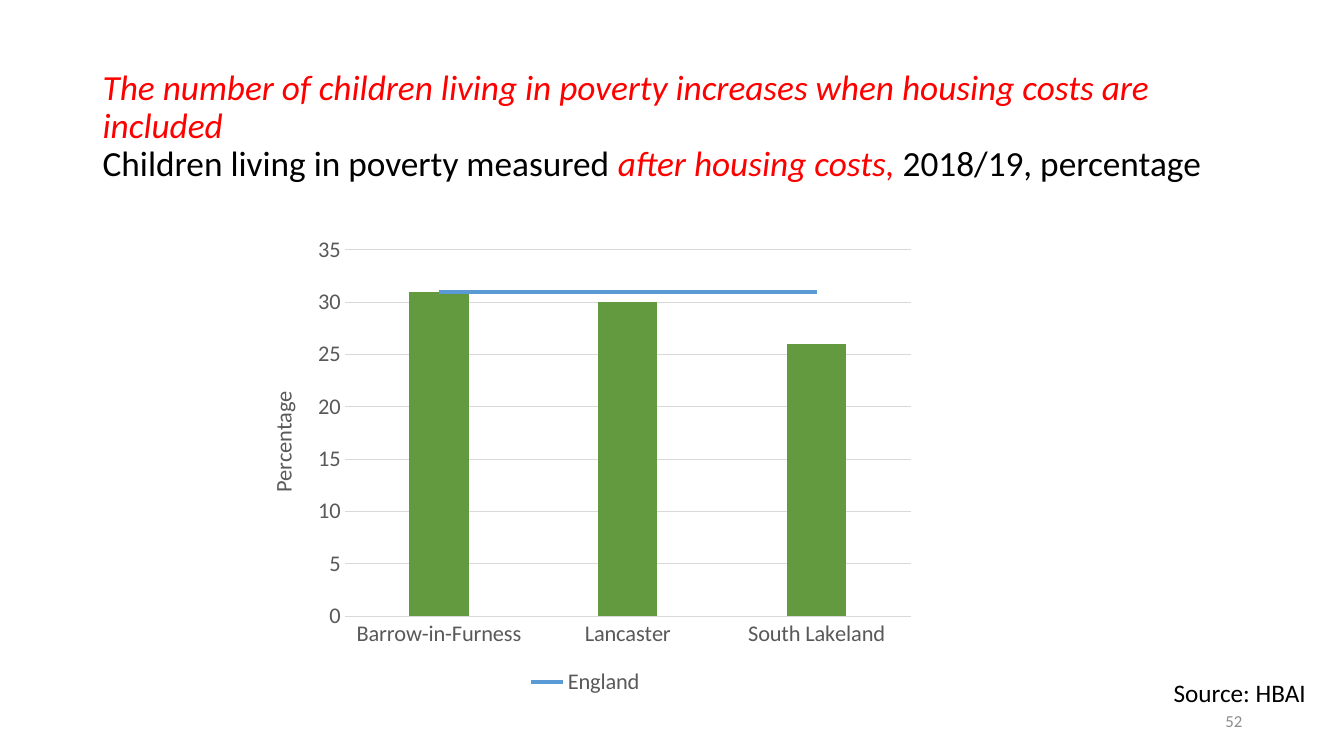
from lxml import etree
from pptx import Presentation
from pptx.chart.data import CategoryChartData as Data
from pptx.dml.color import RGBColor
from pptx.enum.chart import XL_CHART_TYPE as Kind, XL_LEGEND_POSITION as Place
from pptx.enum.chart import XL_MARKER_STYLE as Mark, XL_TICK_MARK as Tick
from pptx.enum.text import MSO_ANCHOR as Anchor, PP_ALIGN as Align
from pptx.oxml import parse_xml
from pptx.oxml.ns import nsdecls, qn
from pptx.util import Inches, Pt

RED = RGBColor(0xFF, 0x00, 0x00)
BLACK = RGBColor(0x00, 0x00, 0x00)
SLATE = RGBColor(0x59, 0x59, 0x59)
GREY = RGBColor(0x8C, 0x8C, 0x8C)
PALE = RGBColor(0xD9, 0xD9, 0xD9)
GREEN = RGBColor(0x63, 0x9A, 0x3F)
BLUE = RGBColor(0x5B, 0x9B, 0xD5)
FACE = "Calibri"


def style(font, size, color, slant=False):
    font.name = FACE
    font.size = Pt(size)
    font.color.rgb = color
    font.bold = False
    font.italic = slant


def write(slide, box, lines, size=18, align=Align.LEFT, anchor=Anchor.TOP, space=1.0):
    frame = slide.shapes.add_textbox(*map(Inches, box)).text_frame
    frame.word_wrap = True
    frame.vertical_anchor = anchor
    para = frame.paragraphs[0]
    para.alignment = align
    para.line_spacing = space
    for row, line in enumerate(lines):
        if row:
            para.add_line_break()
        for text, color, slant in line:
            run = para.add_run()
            run.text = text
            style(run.font, size, color, slant)


def add_title(slide, box):
    lines = [
        [("The number of children living in poverty increases when housing costs are included", RED, True)],
        [("Children living in poverty measured ", BLACK, False),
         ("after housing costs, ", RED, True),
         ("2018/19, percentage", BLACK, False)],
    ]
    write(slide, box, lines, size=25.2, anchor=Anchor.MIDDLE, space=0.9)


def make_line(chart):
    bar = chart.plots[0]._element
    ser = bar.findall(qn("c:ser"))[1]
    for flag in ser.findall(qn("c:invertIfNegative")):
        ser.remove(flag)
    plot = parse_xml(
        f'<c:lineChart {nsdecls("c")}><c:grouping val="standard"/>'
        '<c:varyColors val="0"/><c:marker val="1"/></c:lineChart>')
    plot.insert(2, ser)
    for axis in bar.findall(qn("c:axId")):
        etree.SubElement(plot, qn("c:axId")).set("val", axis.get("val"))
    bar.addnext(plot)
    line = chart.plots[1].series[0]
    line.smooth = False
    line.marker.style = Mark.NONE
    line.format.line.color.rgb = BLUE
    line.format.line.width = Pt(3)


def add_legend(chart):
    chart.has_legend = True
    legend = chart.legend
    legend.position = Place.BOTTOM
    legend.include_in_layout = False
    style(legend.font, 16, SLATE)
    entry = parse_xml(
        f'<c:legendEntry {nsdecls("c")}><c:idx val="0"/>'
        '<c:delete val="1"/></c:legendEntry>')
    spot = legend._element.find(qn("c:legendPos"))
    if spot is None:
        legend._element.insert(0, entry)
    else:
        spot.addnext(entry)


def style_axes(chart):
    for axis in (chart.category_axis, chart.value_axis):
        axis.major_tick_mark = axis.minor_tick_mark = Tick.NONE
        style(axis.tick_labels.font, 16, SLATE)
    edge = chart.category_axis.format.line
    value = chart.value_axis
    value.minimum_scale, value.maximum_scale, value.major_unit = 0, 35, 5
    value.format.line.fill.background()
    for line in (edge, value.major_gridlines.format.line):
        line.color.rgb = PALE
        line.width = Pt(0.75)
    frame = value.axis_title.text_frame
    frame.text = "Percentage"
    style(frame.paragraphs[0].runs[0].font, 16, SLATE)


def add_graph(slide, box):
    data = Data()
    data.categories = ["Barrow-in-Furness", "Lancaster", "South Lakeland"]
    data.add_series("Series 1", (31, 30, 26))
    data.add_series("England", (31, 31, 31))
    chart = slide.shapes.add_chart(
        Kind.COLUMN_CLUSTERED, *map(Inches, box), data).chart
    chart.has_title = False
    style(chart.font, 16, BLACK)
    make_line(chart)
    bars = chart.plots[0]
    bars.vary_by_categories = False
    bars.gap_width = 219
    bars.overlap = -27
    fill = bars.series[0].format.fill
    fill.solid()
    fill.fore_color.rgb = GREEN
    style_axes(chart)
    add_legend(chart)


def add_foot(slide, box):
    left, top, wide, high = box
    write(slide, box, [[("Source: HBAI", BLACK, False)]], align=Align.RIGHT)
    write(slide, (left - 1.74, top + 0.28, 3, high), [[("52", GREY, False)]],
          size=12, align=Align.RIGHT, anchor=Anchor.MIDDLE)


def main():
    deck = Presentation()
    deck.slide_width = Inches(13.33)
    deck.slide_height = Inches(7.5)
    slide = deck.slides.add_slide(deck.slide_layouts[6])
    add_title(slide, (0.92, 0.72, 11.5, 1.08))
    add_graph(slide, (2.44, 2.25, 6.73, 4.7))
    add_foot(slide, (11.16, 6.67, 1.89, 0.4))
    deck.save("out.pptx")


if __name__ == "__main__":
    main()
